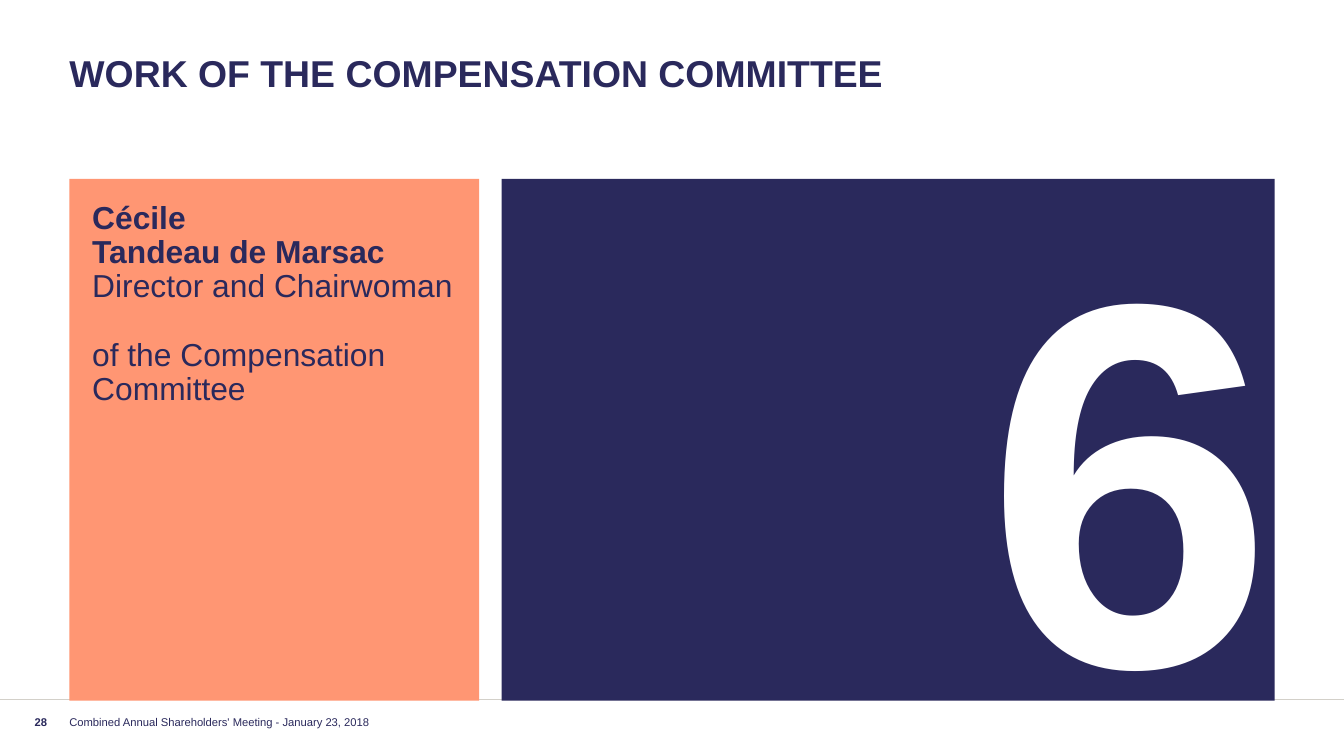
from pptx import Presentation
from pptx import util as u
from pptx.dml import color
from pptx.enum import shapes, text
from pptx.oxml import ns, xmlchemy

NAVY, CORAL, WHITE, GREY = "2A295C", "FF9673", "FFFFFF", "D3D0C9"
LEFT, ALIGN_RIGHT = text.PP_ALIGN.LEFT, text.PP_ALIGN.RIGHT
TOP, BOTTOM = text.MSO_ANCHOR.TOP, text.MSO_ANCHOR.BOTTOM


def paint(target, shade):
    target.rgb = color.RGBColor.from_string(shade)


def place(box, left, top, width, height):
    box.left, box.top = u.Pt(left), u.Pt(top)
    box.width, box.height = u.Pt(width), u.Pt(height)


def fill(box, shade):
    box.fill.solid()
    paint(box.fill.fore_color, shade)


def set_frame(box, insets=(0, 0, 0, 0), anchor=TOP):
    frame = box.text_frame
    frame.word_wrap = True
    frame.auto_size = text.MSO_AUTO_SIZE.NONE
    frame.vertical_anchor = anchor
    (frame.margin_left, frame.margin_top,
     frame.margin_right, frame.margin_bottom) = map(u.Pt, insets)
    return frame


def format_para(para, align=LEFT, spacing=1.0, after=0):
    para.alignment = align
    para.line_spacing = spacing
    para.space_before, para.space_after = u.Pt(0), u.Pt(after)


def remove_bullet(para):
    props = para._p.get_or_add_pPr()
    props.set("marL", "0")
    props.set("indent", "0")
    props.append(xmlchemy.OxmlElement("a:buNone"))


def add_span(para, words, size, shade=NAVY, bold=False):
    span = para.add_run()
    span.text = words
    span.font.name = "Arial"
    span.font.size = u.Pt(size)
    span.font.bold = bold
    paint(span.font.color, shade)


def build_title(box, left, top, width, height):
    place(box, left, top, width, height)
    para = set_frame(box).paragraphs[0]
    format_para(para, spacing=0.9)
    add_span(para, "WORK OF THE COMPENSATION COMMITTEE", 20, bold=True)


def build_number_panel(box, left, top, width, height):
    place(box, left, top, width, height)
    fill(box, NAVY)
    para = set_frame(box, (0, 0, 0, 11.5), BOTTOM).paragraphs[0]
    format_para(para, ALIGN_RIGHT, 0.1)
    remove_bullet(para)
    add_span(para, "6", 278, WHITE, True)


def build_speaker_panel(box, left, top, width, height):
    place(box, left, top, width, height)
    fill(box, CORAL)
    frame = set_frame(box, (12.2,) * 4)
    entries = [
        (("Cécile ", "Tandeau de Marsac"), True),
        (("Director and Chairwoman ", "of the Compensation Committee"), False),
    ]
    for index, ((first, second), bold) in enumerate(entries):
        para = frame.add_paragraph() if index else frame.paragraphs[0]
        format_para(para, spacing=0.9)
        remove_bullet(para)
        add_span(para, first, 17, bold=bold)
        para.add_line_break()
        para._p.findall(ns.qn("a:br"))[-1].append(
            xmlchemy.OxmlElement("a:rPr"))
        para._p.find(ns.qn("a:br"))[0].set("sz", "1700")
        add_span(para, second, 17, bold=bold)


def build_footer(page, left, top, width, height, margin):
    rule = page.shapes.add_connector(
        shapes.MSO_CONNECTOR.STRAIGHT,
        u.Pt(left), u.Pt(top), u.Pt(left + width), u.Pt(top))
    rule.line.width = u.Pt(0.25)
    paint(rule.line.color, GREY)
    rule.element.spPr.append(xmlchemy.OxmlElement("a:effectLst"))
    page.shapes[0].element.addprevious(rule.element)

    labels = [
        ("Combined Annual Shareholders' Meeting - January 23, 2018",
         left + margin, 283, LEFT, 3, False),
        ("28", left + 6.5, 18.7, ALIGN_RIGHT, 0, True),
    ]
    for words, x, label_width, align, after, bold in labels:
        box = page.shapes.add_textbox(
            u.Pt(x), u.Pt(top + 8.8), u.Pt(label_width), u.Pt(height))
        para = set_frame(box).paragraphs[0]
        format_para(para, align, after=after)
        add_span(para, words, 6, bold=bold)


def main():
    deck = Presentation()
    width, height = 720, 405
    deck.slide_width, deck.slide_height = u.Pt(width), u.Pt(height)
    page = deck.slides.add_slide(deck.slide_layouts[3])
    fill(page.background, WHITE)

    margin, gap = 37.2, 12
    content = width - 2 * margin
    panel_top, panel_height = 95.9, 279.5
    speaker_width = 219.5
    number_left = margin + speaker_width + gap

    title, number, speaker = page.placeholders
    build_title(title, margin, 29.5, content, 34.5)
    build_number_panel(number, number_left, panel_top,
                       width - margin - number_left, panel_height)
    build_speaker_panel(speaker, margin, panel_top,
                        speaker_width, panel_height)
    build_footer(page, 0, 374.6, width, 9, margin)
    deck.save("out.pptx")


if __name__ == "__main__":
    main()
